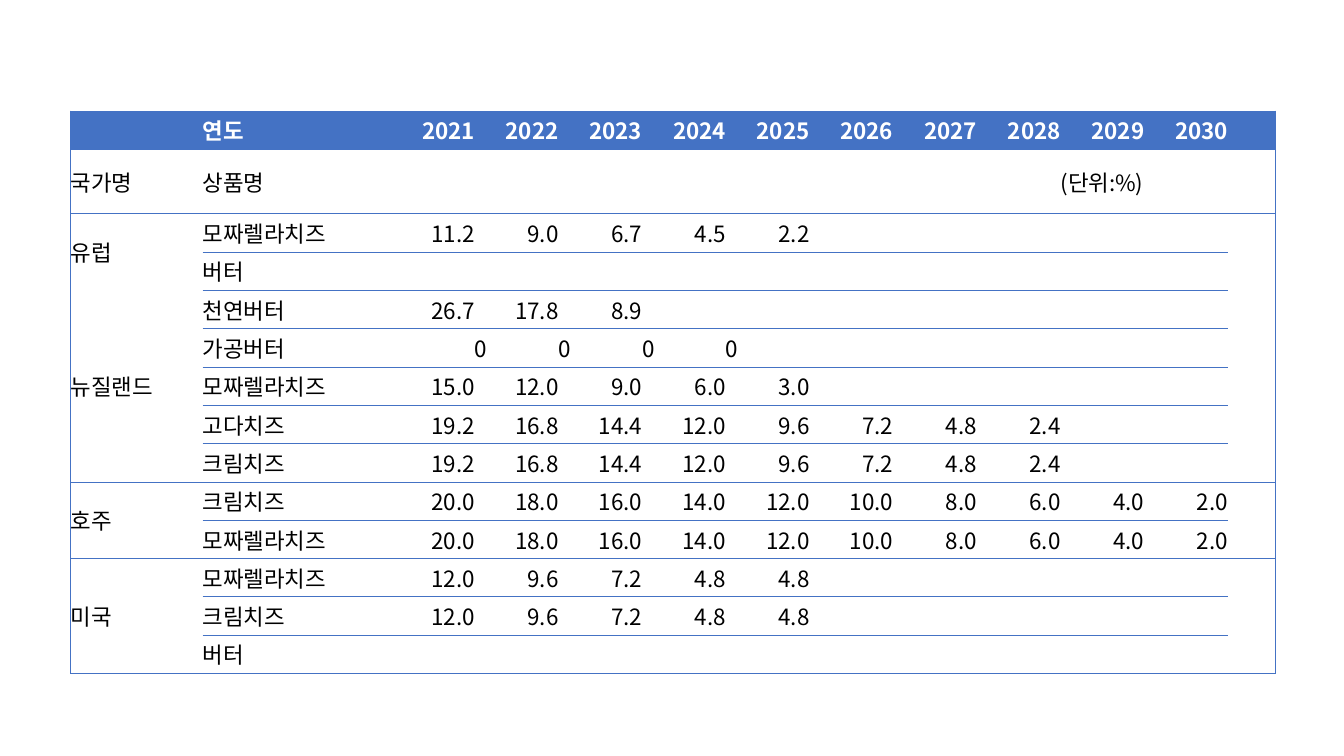
from lxml import etree
from pptx import Presentation
from pptx import util as u
from pptx.dml.color import RGBColor
from pptx.enum import text
from pptx.oxml import ns

HUES = {"blue": "4472C4", "white": "FFFFFF", "black": "000000"}
FONT = "Noto Sans CJK KR"
PLAIN = "{2D5ABB26-0587-4C30-8999-92F81FD0307C}"
WIDTHS = [1.31, 1.87] + [0.83] * 10 + [0.47]
GROUPS = [
    ("유럽", [
        ("모짜렐라치즈", "11.2 9.0 6.7 4.5 2.2"),
        ("버터", "")]),
    ("뉴질랜드", [
        ("천연버터", "26.7 17.8 8.9"),
        ("가공버터", "- 0 0 0 0"),
        ("모짜렐라치즈", "15.0 12.0 9.0 6.0 3.0"),
        ("고다치즈", "19.2 16.8 14.4 12.0 9.6 7.2 4.8 2.4"),
        ("크림치즈", "19.2 16.8 14.4 12.0 9.6 7.2 4.8 2.4")]),
    ("호주", [
        ("크림치즈", "20.0 18.0 16.0 14.0 12.0 10.0 8.0 6.0 4.0 2.0"),
        ("모짜렐라치즈", "20.0 18.0 16.0 14.0 12.0 10.0 8.0 6.0 4.0 2.0")]),
    ("미국", [
        ("모짜렐라치즈", "12.0 9.6 7.2 4.8 4.8"),
        ("크림치즈", "12.0 9.6 7.2 4.8 4.8"),
        ("버터", "")]),
]


class Deck:
    """Hold the table style and the current slide."""

    def __init__(self):
        self.prs = Presentation()
        self.prs.slide_width = u.Inches(13.33)
        self.prs.slide_height = u.Inches(7.5)
        self.slide = self.prs.slides.add_slide(self.prs.slide_layouts[6])

    def hue(self, name):
        return RGBColor.from_string(HUES[name])

    def edge(self, cell, sides):
        props = cell._tc.get_or_add_tcPr()
        for spot, side in enumerate(sides):
            line = etree.Element(ns.qn("a:ln" + side), w=str(u.Pt(0.5)))
            fill = etree.SubElement(line, ns.qn("a:solidFill"))
            etree.SubElement(fill, ns.qn("a:srgbClr"), val=HUES["blue"])
            props.insert(spot, line)

    def cell(self, cell, words, head, right, sides):
        cell.margin_left = cell.margin_right = 0
        cell.margin_top = cell.margin_bottom = 0
        cell.vertical_anchor = text.MSO_ANCHOR.MIDDLE
        cell.text = words
        if head:
            cell.fill.solid()
            cell.fill.fore_color.rgb = self.hue("blue")
        else:
            cell.fill.background()
        para = cell.text_frame.paragraphs[0]
        para.alignment = text.PP_ALIGN.RIGHT if right else text.PP_ALIGN.LEFT
        font = para.font
        font.name, font.size, font.bold = FONT, u.Pt(16), head
        font.color.rgb = self.hue("white" if head else "black")
        self.edge(cell, sides)

    def table(self, rows, spans, left, top):
        last = len(WIDTHS) - 1
        frame = self.slide.shapes.add_table(
            len(rows), len(WIDTHS), u.Inches(left), u.Inches(top),
            u.Inches(sum(WIDTHS)), u.Inches(0.38 * len(rows)))
        grid = frame.table
        grid.horz_banding = False
        grid._tbl.tblPr.find(ns.qn("a:tableStyleId")).text = PLAIN
        for col, width in zip(grid.columns, WIDTHS):
            col.width = u.Inches(width)
        for row in grid.rows:
            row.height = u.Inches(0.38)
        for r, row in enumerate(rows):
            for c, words in enumerate(row):
                outer = c in (0, last)
                sides = [side for side, shown in (
                    ("L", c == 0), ("R", c == last), ("T", r == 0),
                    ("B", not outer or r not in (2, 3))) if shown]
                right = words[-1:].isdigit()
                self.cell(grid.cell(r, c), words, r == 0, right, sides)
        for start, size in spans:
            for c in (0, last):
                grid.cell(start, c).merge(grid.cell(start + size - 1, c))

    def save(self):
        self.prs.save("out.pptx")


def main():
    rows = [["", "연도"] + [str(year) for year in range(2021, 2031)] + [""],
            ["국가명", "상품명"] + [""] * 8 + ["(단위:%)", "", ""]]
    spans = []
    for land, goods in GROUPS:
        spans.append((len(rows), len(goods)))
        for n, (name, rates) in enumerate(goods):
            vals = [{"-": "", "0": "0　"}.get(v, v) for v in rates.split()]
            row = ["" if n else land, name] + vals
            rows.append(row + [""] * (len(WIDTHS) - len(row)))
    deck = Deck()
    deck.table(rows, spans, 0.7, 1.1)
    deck.save()


if __name__ == "__main__":
    main()
